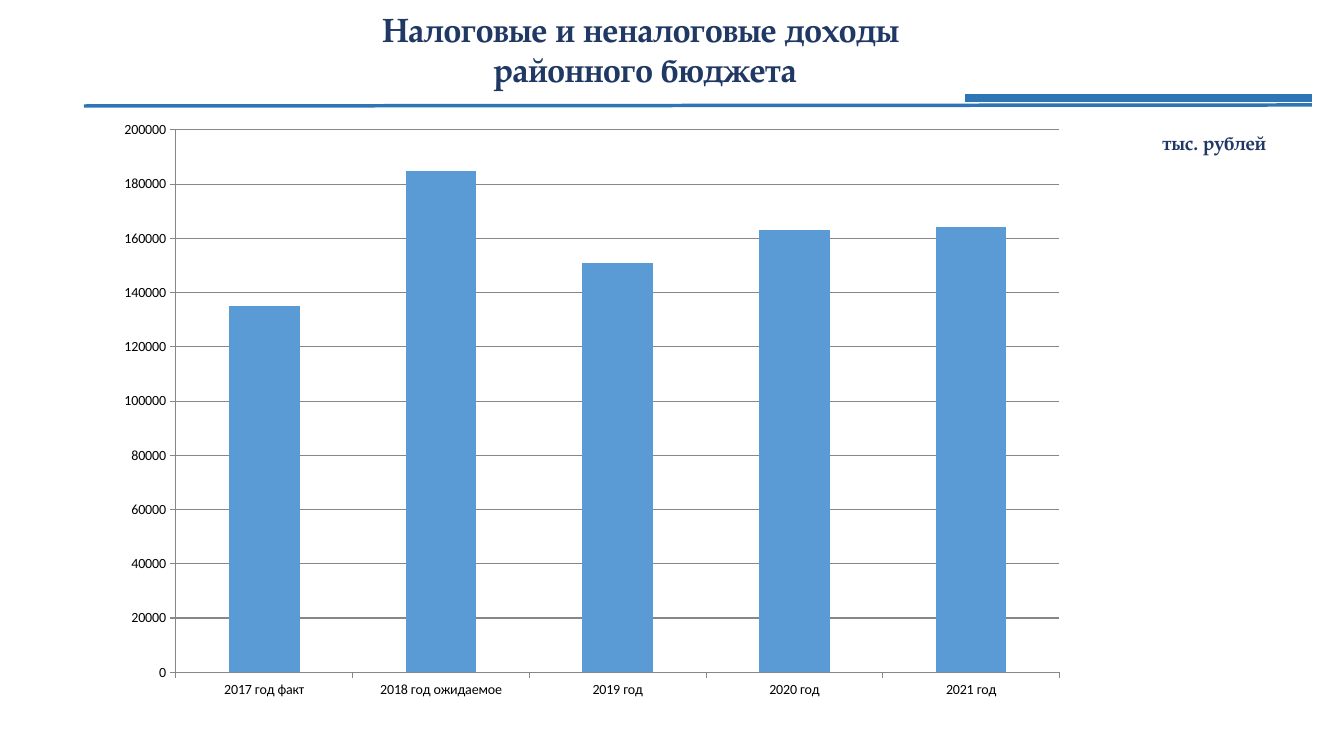
from lxml import etree
from pptx import Presentation
from pptx.chart.data import CategoryChartData
from pptx.dml.color import RGBColor
from pptx.enum.chart import XL_CHART_TYPE, XL_TICK_MARK
from pptx.enum.shapes import MSO_CONNECTOR
from pptx.enum.text import MSO_ANCHOR, PP_ALIGN
from pptx.oxml.ns import qn
from pptx.util import Emu, Pt

STACKED = XL_CHART_TYPE.COLUMN_STACKED
OUTSIDE = XL_TICK_MARK.OUTSIDE
STRAIGHT = MSO_CONNECTOR.STRAIGHT
MIDDLE = MSO_ANCHOR.MIDDLE
CENTER, RIGHT = PP_ALIGN.CENTER, PP_ALIGN.RIGHT

NAVY = RGBColor(0x20, 0x38, 0x64)
RULE_BLUE = RGBColor(0x2E, 0x75, 0xB6)
BAR_BLUE = RGBColor(0x5B, 0x9B, 0xD5)
GRID_GRAY = RGBColor(0x87, 0x87, 0x87)
BLACK = RGBColor(0, 0, 0)
HEADING_FONT = "TeX Gyre Pagella"
PX_PER_INCH = 100.8


def px(*lengths):
    return [Emu(round(length * 914400 / PX_PER_INCH)) for length in lengths]


def add_heading_run(paragraph, text, size):
    run = paragraph.add_run()
    run.text = text
    run.font.name = HEADING_FONT
    run.font.size = Pt(size)
    run.font.bold = True
    run.font.color.rgb = NAVY


prs = Presentation()
prs.slide_width, prs.slide_height = px(1344, 756)
slide = prs.slides.add_slide(prs.slide_layouts[5])

# Title
title = slide.shapes.title
title.left, title.top, title.width, title.height = px(40, 3, 1210, 92)
title.text_frame.vertical_anchor = MIDDLE
heading = title.text_frame.paragraphs[0]
heading.alignment = CENTER
add_heading_run(heading, "Налоговые и неналоговые доходы ", 24)
heading.add_line_break()
add_heading_run(heading, "районного бюджета", 24)

# Unit of measure
unit = slide.shapes.add_textbox(*px(1102, 126, 174, 34)).text_frame
unit.word_wrap = True
unit.paragraphs[0].alignment = RIGHT
add_heading_run(unit.paragraphs[0], "тыс. рублей", 14)

# Rules under the title: start x, start y, end x, end y, width in points
for *ends, weight in [(84, 106, 1312, 105, 2.5), (965, 98, 1312, 98, 6)]:
    rule = slide.shapes.add_connector(STRAIGHT, *px(*ends))
    rule.line.color.rgb = RULE_BLUE
    rule.line.width = Pt(weight)
    etree.SubElement(rule._element.spPr, qn("a:effectLst"))

# Revenue by year
revenue = CategoryChartData(number_format="General")
revenue.categories = ["2017 год факт", "2018 год ожидаемое", "2019 год", "2020 год", "2021 год"]
revenue.add_series("Доходы", [135000, 185000, 151000, 163000, 164000])
chart = slide.shapes.add_chart(STACKED, *px(105, 110, 974, 600), revenue).chart
chart.has_title = False
chart.has_legend = False
chart.font.name = "Calibri"
chart.font.size = Pt(10)
chart.font.color.rgb = BLACK

columns = chart.plots[0]
columns.gap_width = 150
columns.overlap = 100
columns.vary_by_categories = False
columns.series[0].format.fill.solid()
columns.series[0].format.fill.fore_color.rgb = BAR_BLUE

amounts = chart.value_axis
amounts.minimum_scale = 0
amounts.maximum_scale = 200000
amounts.major_unit = 20000
amounts.has_major_gridlines = True
for axis in (amounts, chart.category_axis):
    axis.major_tick_mark = OUTSIDE
for ruled in (amounts, chart.category_axis, amounts.major_gridlines):
    ruled.format.line.color.rgb = GRID_GRAY
    ruled.format.line.width = Pt(0.75)

prs.save("out.pptx")
